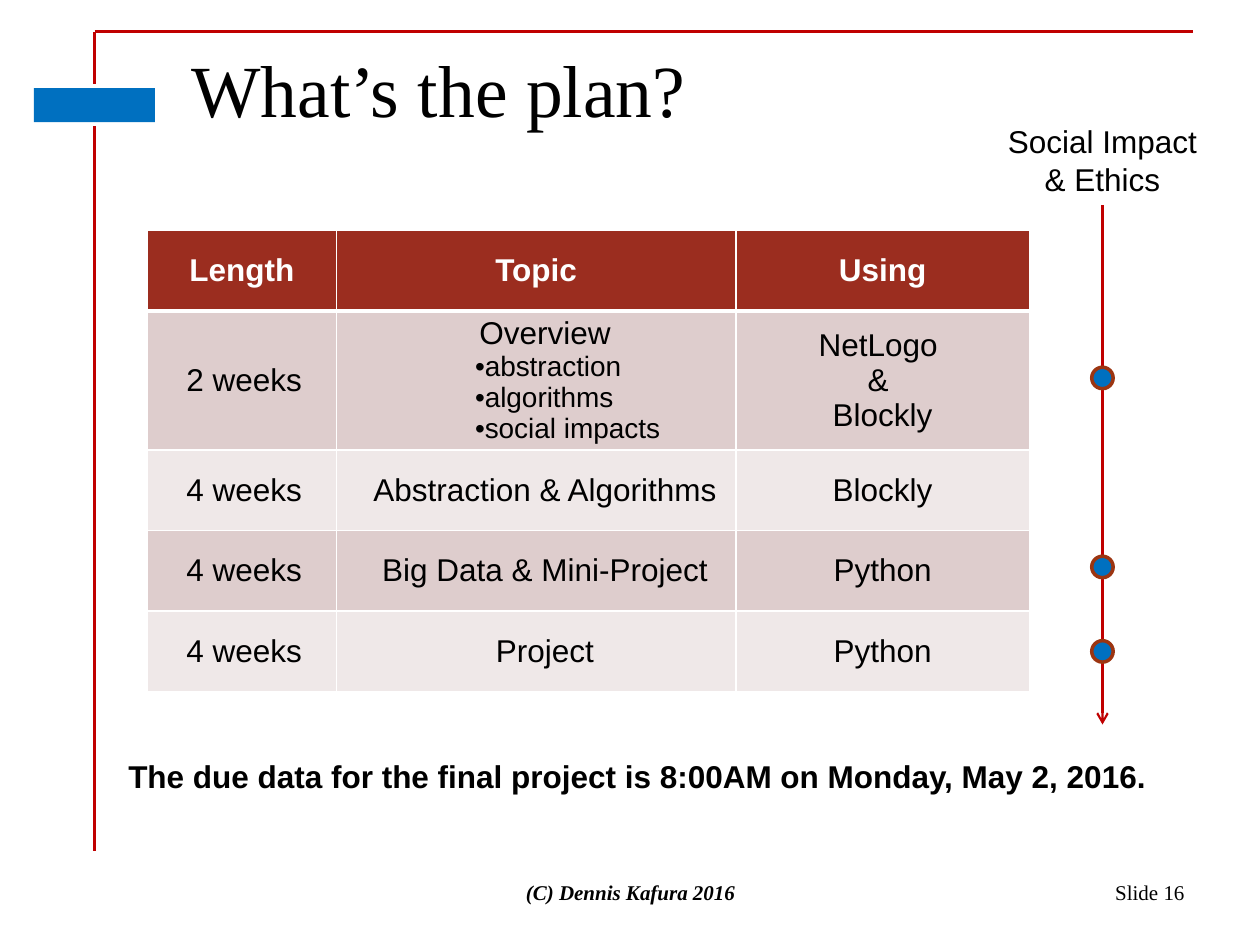
import pptx
import pptx.util
import pptx.dml.color
import pptx.enum.shapes
import pptx.enum.text
import pptx.oxml.ns
from lxml import etree

Inches, Pt = pptx.util.Inches, pptx.util.Pt
ALIGN, ANCHOR = pptx.enum.text.PP_ALIGN, pptx.enum.text.MSO_ANCHOR
SHAPE, LINE = pptx.enum.shapes.MSO_SHAPE, pptx.enum.shapes.MSO_CONNECTOR
qn = pptx.oxml.ns.qn

THEME = {
    "sans": "Arial", "serif": "Times New Roman",
    "title": 42, "body": 18, "bullet": 16, "footer": 12,
    "ink": "000000", "white": "FFFFFF", "red": "C00000", "blue": "0070C0",
    "header": "9B2D1F", "bands": ("DECDCD", "EFE8E8"), "dot_line": "9C3511",
}

TITLE = "What’s the plan?"
HEADER = ("Length", "Topic", "Using")
PLAN = [
    ("2 weeks", "Overview", "NetLogo \v& \vBlockly"),
    ("4 weeks", "Abstraction & Algorithms", "Blockly"),
    ("4 weeks", "Big Data & Mini-Project", "Python"),
    ("4 weeks", "Project", "Python"),
]
OVERVIEW = ("abstraction", "algorithms", "social impacts")
COLUMNS = (1.5, 3.17, 2.33)
INDENTS = (0.21, 0.14, 0)
ALIGNS = (ALIGN.LEFT, ALIGN.CENTER, ALIGN.CENTER)
ROWS = (0.64, 1.1, 0.64, 0.64, 0.64)
FRAME = [((0.75, 0.25), (9.47, 0.25), 2), ((0.75, 0.25), (0.75, 0.67), 1.75),
         ((0.75, 1), (0.75, 6.75), 1.75)]
BADGE = (0.27, 0.7, 0.96, 0.27)
AXIS_X, AXIS_TOP, AXIS_END = 8.75, 1.63, 5.75
DOT, DOT_CENTERS = 0.17, (3, 4.5, 5.17)
DUE = "The due data for the final project is 8:00AM on Monday, May 2, 2016."


def rgb(name):
    return pptx.dml.color.RGBColor.from_string(THEME.get(name, name))


def write(p, text, size="body", font="sans", color="ink", bold=False,
          italic=False, align=None, indent=0, bullet=False):
    """Add text to a paragraph and format both."""
    if align is not None:
        p.alignment = align
    if indent or bullet:
        pPr = p._p.get_or_add_pPr()
        pPr.set("marL", str(Inches(indent)))
        pPr.set("indent", "0")
        if bullet:
            etree.SubElement(pPr, qn("a:buFont")).set("typeface", THEME[font])
            etree.SubElement(pPr, qn("a:buChar")).set("char", "•")
    for i, line in enumerate(text.split("\v")):
        if i:
            p.add_line_break()
        r = p.add_run()
        r.text = line
        r.font.size, r.font.name = Pt(THEME[size]), THEME[font]
        r.font.bold, r.font.italic = bold, italic
        r.font.color.rgb = rgb(color)


def add_text(s, box, text, wrap=True, anchor=ANCHOR.TOP, **fmt):
    sp = s.shapes.add_textbox(*map(Inches, box))
    tf = sp.text_frame
    tf.word_wrap, tf.vertical_anchor = wrap, anchor
    write(tf.paragraphs[0], text, **fmt)
    return sp


def add_shape(s, kind, box, fill, line=None):
    sp = s.shapes.add_shape(kind, *map(Inches, box))
    sp.shadow.inherit = False
    sp.fill.solid()
    sp.fill.fore_color.rgb = rgb(fill)
    if line:
        sp.line.color.rgb, sp.line.width = rgb(line), Pt(2)
    else:
        sp.line.fill.background()


def add_line(s, start, end, width, arrow=False):
    c = s.shapes.add_connector(LINE.STRAIGHT, *map(Inches, start + end))
    c.line.color.rgb, c.line.width = rgb("red"), Pt(width)
    if arrow:
        etree.SubElement(c.line._get_or_add_ln(), qn("a:tailEnd")).set("type", "arrow")
    etree.SubElement(c._element.spPr, qn("a:effectLst"))
    return c


def style_cell(cell, fill, top, bottom):
    """Set fill, middle anchor and white borders; top and bottom are in points."""
    cell.vertical_anchor = ANCHOR.MIDDLE
    cell.margin_top = cell.margin_bottom = 0
    tcPr = cell._tc.get_or_add_tcPr()
    for side, width in (("L", 1), ("R", 1), ("T", top), ("B", bottom)):
        ln = etree.SubElement(tcPr, qn("a:ln" + side))
        ln.set("w", str(Pt(width)))
        solid = etree.SubElement(ln, qn("a:solidFill"))
        etree.SubElement(solid, qn("a:srgbClr")).set("val", THEME["white"])
    cell.fill.solid()
    cell.fill.fore_color.rgb = rgb(fill)


def add_plan(s):
    table = s.shapes.add_table(
        len(ROWS), len(COLUMNS), Inches(1.17), Inches(1.83),
        Inches(sum(COLUMNS)), Inches(sum(ROWS))).table
    for col, width in zip(table.columns, COLUMNS):
        col.width = Inches(width)
    for row, height in zip(table.rows, ROWS):
        row.height = Inches(height)
    for c, text in enumerate(HEADER):
        cell = table.cell(0, c)
        style_cell(cell, "header", 1, 3)
        write(cell.text_frame.paragraphs[0], text, color="white", bold=True,
              align=ALIGN.CENTER)
    for r, row in enumerate(PLAN, 1):
        for c, text in enumerate(row):
            cell = table.cell(r, c)
            style_cell(cell, THEME["bands"][(r - 1) % 2], 3 if r == 1 else 1, 1)
            write(cell.text_frame.paragraphs[0], text, align=ALIGNS[c],
                  indent=INDENTS[c])
    for text in OVERVIEW:
        write(table.cell(1, 1).text_frame.add_paragraph(), text, size="bullet",
              indent=1, bullet=True)


def add_timeline(s):
    label = add_text(s, (7.83, 0.92, 1.84, 0.71), "Social Impact & Ethics",
                     align=ALIGN.CENTER)
    axis = add_line(s, (AXIS_X, AXIS_TOP), (AXIS_X, AXIS_END), 1.25, arrow=True)
    axis.begin_connect(label, 2)
    for y in DOT_CENTERS:
        add_shape(s, SHAPE.OVAL, (AXIS_X - DOT / 2, y - DOT / 2, DOT, DOT),
                  "blue", "dot_line")


def main():
    prs = pptx.Presentation()
    prs.slide_width, prs.slide_height = Inches(10), Inches(7.5)
    s = prs.slides.add_slide(prs.slide_layouts[5])
    for line in FRAME:
        add_line(s, *line)
    add_shape(s, SHAPE.RECTANGLE, BADGE, "blue")

    title = s.shapes.title
    title.left, title.top, title.width, title.height = map(Inches, (1.42, 0.32, 8.08, 0.78))
    title.text_frame.vertical_anchor = ANCHOR.BOTTOM
    write(title.text_frame.paragraphs[0], TITLE, size="title", font="serif",
          align=ALIGN.LEFT)

    add_plan(s)
    add_timeline(s)
    add_text(s, (0.92, 5.96, 8.36, 0.4), DUE, wrap=False, bold=True)
    footer = {"size": "footer", "font": "serif", "anchor": ANCHOR.MIDDLE}
    add_text(s, (3.42, 6.83, 3.17, 0.5), "(C) Dennis Kafura 2016",
             bold=True, italic=True, align=ALIGN.CENTER, **footer)
    add_text(s, (7.17, 6.83, 2.33, 0.5), "Slide 16", align=ALIGN.RIGHT, **footer)
    prs.save("out.pptx")


if __name__ == "__main__":
    main()
